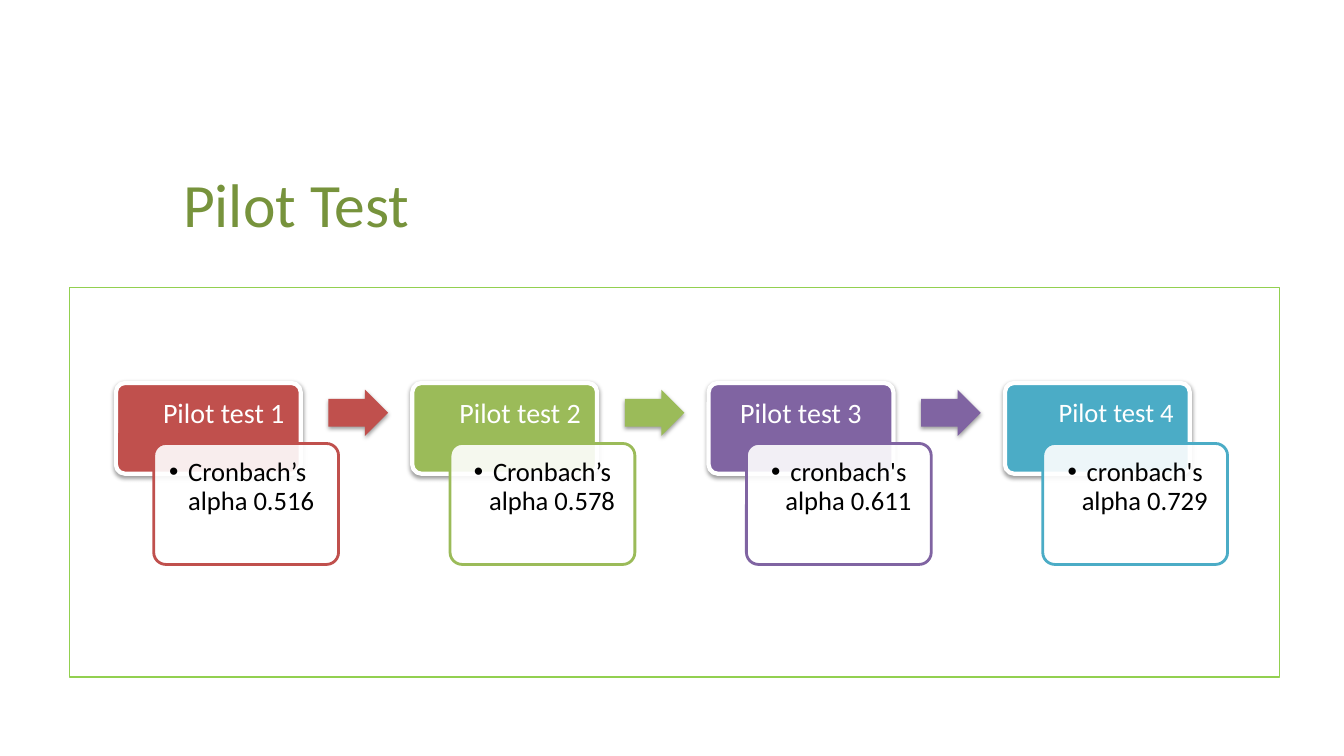
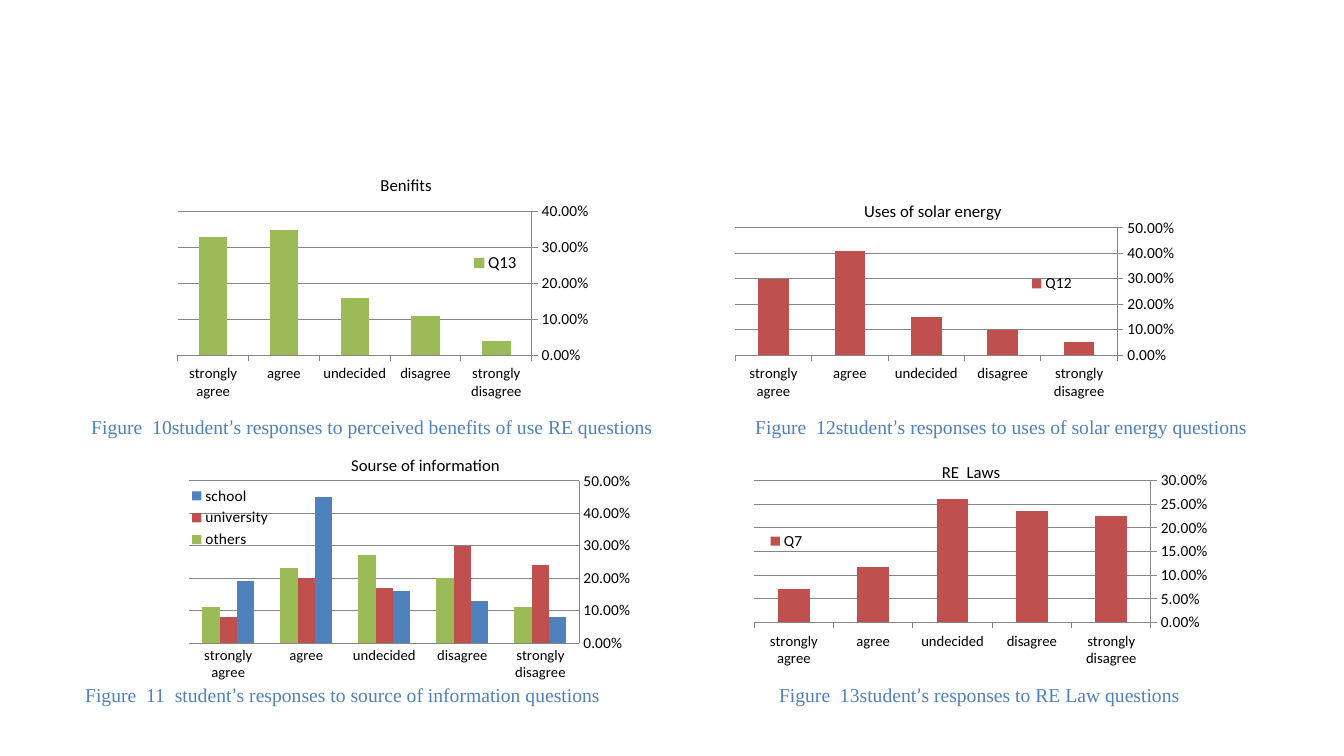
from lxml import etree
from pptx import Presentation
from pptx import util as u
from pptx.chart import data
from pptx.dml import color
from pptx.enum import chart as ch, shapes, text
from pptx.oxml import ns

COLS, ROWS, CELL = 80, 45, 914400 / 6
SANS, SERIF = "Calibri", "Times New Roman"
BLUE, RED, GREEN, VIOLET, TEAL = "4F81BD", "C0504D", "9BBB59", "8064A2", "4BACC6"
BLACK, WHITE, GRAY = "000000", "FFFFFF", "868686"
LEFT, MID, RIGHT = text.PP_ALIGN.LEFT, text.PP_ALIGN.CENTER, text.PP_ALIGN.RIGHT
KIND = shapes.MSO_SHAPE
CATS = ["strongly disagree", "disagree", "undecided", "agree", "strongly agree"]


def hue(code):
    return color.RGBColor.from_string(code)


def grid(*cells):
    return [u.Emu(round(n * CELL)) for n in cells]


def sub(node, tag, **attrs):
    child = etree.SubElement(node, ns.qn(tag))
    for key, val in attrs.items():
        child.set(key, str(val))
    return child


def style(font, name=SANS, size=12, ink=BLACK):
    font.name, font.size, font.bold = name, u.Pt(size), False
    font.color.rgb = hue(ink)


def write(frame, words, font=SANS, size=12, ink=BLACK, align=MID,
          inset=None, anchor=None, line=None, bullet=False):
    frame.word_wrap = True
    if inset:
        (frame.margin_left, frame.margin_top,
         frame.margin_right, frame.margin_bottom) = grid(*inset)
    if anchor is not None:
        frame.vertical_anchor = anchor
    para = frame.paragraphs[0]
    para.alignment = align
    if line:
        para.line_spacing = line
    if bullet:
        props = para._p.get_or_add_pPr()
        gap = u.Inches(0.19)
        props.set("marL", str(gap))
        props.set("indent", str(-gap))
        sub(props, "a:buFont", typeface="Arial")
        sub(props, "a:buChar", char="•")
    for part, face in [(words, font)] if isinstance(words, str) else words:
        run = para.add_run()
        run.text = part
        style(run.font, face, size, ink)


def place(node, x, y, w=None, h=None):
    old = node.find(ns.qn("c:layout"))
    if old is not None:
        node.remove(old)
    lay = etree.Element(ns.qn("c:layout"))
    man = sub(lay, "c:manualLayout")
    if node.tag == ns.qn("c:plotArea"):
        sub(man, "c:layoutTarget", val="inner")
    sub(man, "c:xMode", val="edge")
    sub(man, "c:yMode", val="edge")
    for key, val in zip("xywh", (x, y, w, h)):
        if val is not None:
            sub(man, "c:" + key, val=val)
    over = node.find(ns.qn("c:overlay"))
    if over is None:
        node.insert(0, lay)
    else:
        over.addprevious(lay)


class Deck:
    def __init__(self):
        self.file = Presentation()
        self.file.slide_width, self.file.slide_height = grid(COLS, ROWS)
        self.slide = None

    def page(self, title=None):
        layout = self.file.slide_layouts[5 if title else 6]
        self.slide = self.file.slides.add_slide(layout)
        if title:
            head = self.slide.shapes.title
            head.left, head.top, head.width, head.height = grid(10.3, 8.35, 61.5, 7.5)
            write(head.text_frame, title, size=44, ink="77933C", align=LEFT,
                  anchor=text.MSO_ANCHOR.MIDDLE)

    def shape(self, kind, at, fill=None, line=None, width=1, clear=None,
              shade=False, adjust=()):
        item = self.slide.shapes.add_shape(kind, *grid(*at))
        item.shadow.inherit = False
        for i, val in enumerate(adjust):
            item.adjustments[i] = val
        if fill:
            item.fill.solid()
            item.fill.fore_color.rgb = hue(fill)
        else:
            item.fill.background()
        if clear:
            tone = item.fill._xPr.find(".//" + ns.qn("a:srgbClr"))
            sub(tone, "a:alpha", val=clear * 1000)
        if line:
            item.line.color.rgb = hue(line)
            item.line.width = u.Pt(width)
        else:
            item.line.fill.background()
        if shade:
            glow = sub(item._element.spPr.find(ns.qn("a:effectLst")), "a:outerShdw",
                       blurRad=u.Pt(3.1), dist=u.Pt(1.6), dir=5400000, rotWithShape=0)
            sub(sub(glow, "a:srgbClr", val=BLACK), "a:alpha", val=38000)
        return item

    def step(self, x, ink, head, body, size, sides, arrow):
        card = self.shape(KIND.ROUNDED_RECTANGLE, (x, 22.8, 11, 5.4), ink, WHITE, 3,
                          shade=True, adjust=[0.1])
        write(card.text_frame, head, size=size, ink=WHITE, align=sides[0], line=0.9,
              inset=(0.8, 0.8, 0.8, 0.5), anchor=text.MSO_ANCHOR.TOP)
        note = self.shape(KIND.ROUNDED_RECTANGLE, (x + 2.25, 26.4, 11, 7.2), WHITE, ink, 2,
                          clear=90, adjust=[0.1])
        write(note.text_frame, body, size=19, align=sides[1], line=0.9, bullet=True,
              inset=[0.7] * 4, anchor=text.MSO_ANCHOR.TOP)
        if arrow:
            self.shape(KIND.RIGHT_ARROW, (x + 12.65, 23.2, 3.55, 2.75), ink,
                       shade=True, adjust=[0.6, 0.5])

    def label(self, x, y, w, words):
        box = self.slide.shapes.add_textbox(*grid(x, y, w, 2.05))
        start, end = words.split("’")
        write(box.text_frame, [(start, SERIF), ("’", SANS), (end, SERIF)], size=14,
              ink=BLUE, anchor=text.MSO_ANCHOR.MIDDLE)

    def chart(self, at, title, series, top, unit, plot, spot, key, keysize=11,
              tick=ch.XL_TICK_MARK.OUTSIDE):
        source = data.CategoryChartData(number_format="0.00%")
        source.categories = CATS
        for name, ink, vals in series:
            source.add_series(name, vals)
        graph = self.slide.shapes.add_chart(
            ch.XL_CHART_TYPE.COLUMN_CLUSTERED, *grid(*at), source).chart
        style(graph.font, size=10)
        graph.has_title = graph.has_legend = True
        write(graph.chart_title.text_frame, title)
        graph.legend.position = ch.XL_LEGEND_POSITION.RIGHT
        graph.legend.include_in_layout = True
        style(graph.legend.font, size=keysize)
        bars = graph.plots[0]
        bars.gap_width, bars.overlap, bars.vary_by_categories = 150, 0, False
        for one, (name, ink, vals) in zip(bars.series, series):
            one.format.fill.solid()
            one.format.fill.fore_color.rgb = hue(ink)
        cat, val = graph.category_axis, graph.value_axis
        cat.reverse_order = True
        val.minimum_scale, val.maximum_scale, val.major_unit = 0, top, unit
        val.has_major_gridlines = True
        val.tick_labels.number_format = "0.00%"
        val.tick_labels.number_format_is_linked = False
        for axis, size in ((cat, 10.5), (val, 11)):
            axis.major_tick_mark = tick
            axis.minor_tick_mark = ch.XL_TICK_MARK.NONE
            style(axis.tick_labels.font, size=size)
        for rule in (cat.format.line, val.format.line, val.major_gridlines.format.line):
            rule.color.rgb = hue(GRAY)
            rule.width = u.Pt(0.75)
        for tag, spots in (("plotArea", plot), ("title", spot), ("legend", key)):
            place(graph.element.find(".//" + ns.qn("c:" + tag)), *spots)


def pilot(deck):
    deck.page("Pilot Test")
    deck.shape(KIND.RECTANGLE, (4.15, 17.1, 72, 23.2), line="92D050", width=0.75)
    steps = [
        (RED, "Cronbach’s alpha 0.516", 20, (RIGHT, LEFT)),
        (GREEN, "Cronbach’s alpha 0.578", 20, (RIGHT, MID)),
        (VIOLET, "cronbach's alpha 0.611", 20, (MID, MID)),
        (TEAL, "cronbach's alpha 0.729", 19, (RIGHT, MID)),
    ]
    for i, (ink, body, size, sides) in enumerate(steps):
        deck.step(6.9 + i * 17.64, ink, f"Pilot test {i + 1}", body, size, sides,
                  i < len(steps) - 1)


def survey(deck):
    deck.page()
    deck.chart((10.55, 9.25, 27.05, 15.25), "Benifits",
               [("Q13", GREEN, (0.04, 0.11, 0.16, 0.35, 0.33))], 0.4, 0.1,
               (0, 0.22, 0.78, 0.56), (0.44, 0.06), (0.64, 0.37, 0.12, 0.1), keysize=12)
    deck.chart((11, 25.7, 27, 14.9), "Sourse of information",
               [("school", BLUE, (0.08, 0.13, 0.16, 0.45, 0.19)),
                ("university", RED, (0.24, 0.3, 0.17, 0.2, 0.08)),
                ("others", GREEN, (0.11, 0.2, 0.27, 0.23, 0.11))], 0.5, 0.1,
               (0.01, 0.2, 0.86, 0.66), (0.36, 0.08), (0, 0.21, 0.2, 0.28),
               tick=ch.XL_TICK_MARK.NONE)
    deck.chart((42.9, 11.3, 28.8, 13.3), "Uses of solar energy",
               [("Q12", RED, (0.05, 0.1, 0.15, 0.41, 0.3))], 0.5, 0.1,
               (0.03, 0.17, 0.79, 0.57), (0.29, 0.03), (0.63, 0.37, 0.11, 0.1))
    deck.chart((44.35, 26.95, 27.55, 13.85), "RE\u00a0 Laws".replace("\u00a0", " "),
               [("Q7", RED, (0.225, 0.236, 0.261, 0.118, 0.07))], 0.3, 0.05,
               (0.02, 0.12, 0.86, 0.61), (0.42, 0.02), (0.04, 0.33, 0.1, 0.1))
    for spot in (
        (3.85, 24.35, 36.6, "Figure  10student’s responses to perceived benefits of use RE questions"),
        (4.3, 40.3, 32.2, "Figure  11  student’s responses to source of information questions"),
        (43.5, 24.4, 32.2, "Figure  12student’s responses to uses of solar energy questions"),
        (45.05, 40.3, 26.5, "Figure  13student’s responses to RE Law questions"),
    ):
        deck.label(*spot)


def main():
    deck = Deck()
    pilot(deck)
    survey(deck)
    deck.file.save("out.pptx")


if __name__ == "__main__":
    main()
